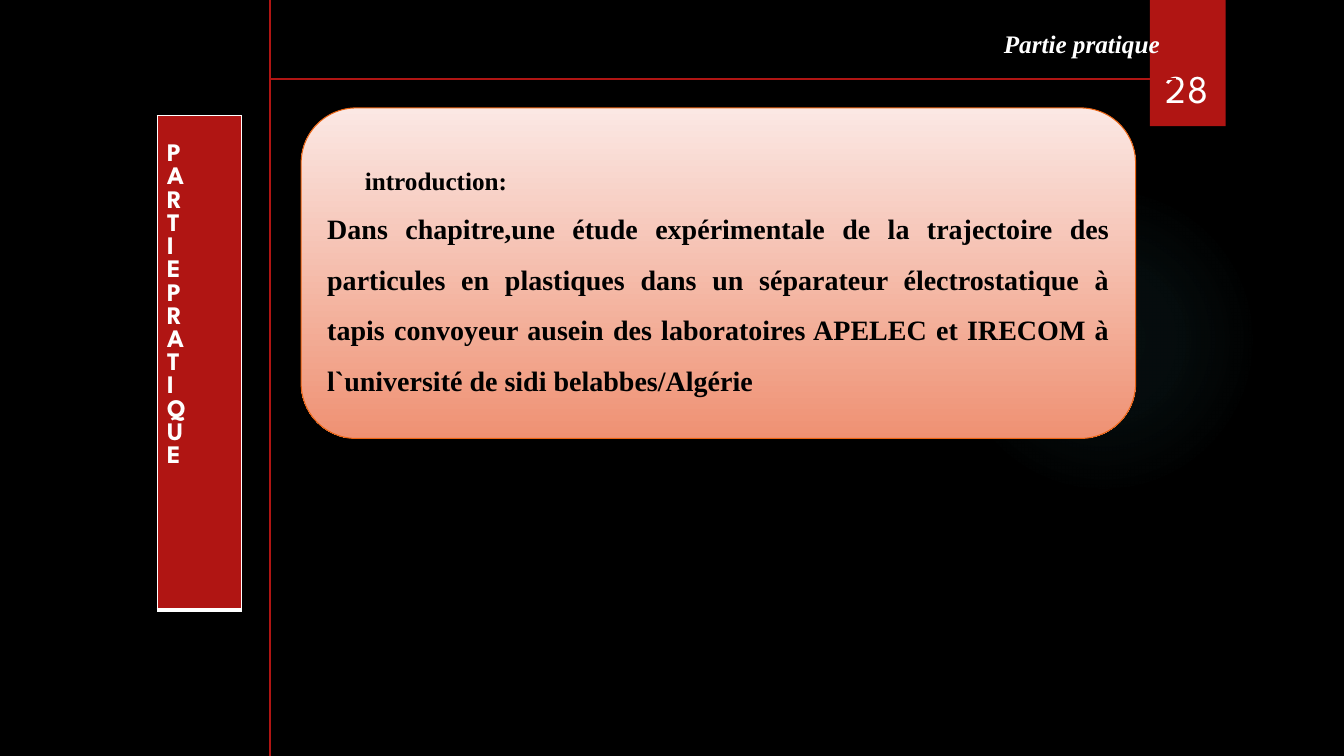
from pptx import Presentation
from pptx.dml.color import RGBColor
from pptx.enum.shapes import MSO_CONNECTOR, MSO_SHAPE
from pptx.enum.text import MSO_ANCHOR, PP_ALIGN
from pptx.oxml import parse_xml
from pptx.oxml.ns import nsdecls
from pptx.util import Cm, Pt

BLACK = RGBColor(0x00, 0x00, 0x00)
WHITE = RGBColor(0xFF, 0xFF, 0xFF)
RED = RGBColor(0xB0, 0x15, 0x13)
ORANGE = RGBColor(0xEA, 0x63, 0x12)
CARD_TOP = RGBColor(0xFB, 0xE8, 0xE4)
CARD_BOTTOM = RGBColor(0xEF, 0x91, 0x73)
TEAL = RGBColor(0x50, 0xB9, 0xC1)
SERIF = "Times New Roman"
SANS = "League Spartan"


class SlideBuilder:
    def __init__(self, deck):
        self.page = deck.slides.add_slide(deck.slide_layouts[6])
        background = self.page.background.fill
        background.solid()
        background.fore_color.rgb = BLACK

    def style(self, para, font, size, color, bold=False, italic=False, align=PP_ALIGN.LEFT):
        para.alignment = align
        for span in para.runs:
            span.font.name = font
            span.font.size = Pt(size)
            span.font.color.rgb = color
            span.font.bold = bold
            span.font.italic = italic

    def shape(self, kind, left, top, width, height):
        shape = self.page.shapes.add_shape(kind, Cm(left), Cm(top), Cm(width), Cm(height))
        shape.shadow.inherit = False
        shape.line.fill.background()
        return shape

    def block(self, left, top, width, height, color):
        block = self.shape(MSO_SHAPE.RECTANGLE, left, top, width, height)
        block.fill.solid()
        block.fill.fore_color.rgb = color

    def glow(self, left, top, size, color, stops):
        glow = self.shape(MSO_SHAPE.OVAL, left, top, size, size)
        glow.fill.background()
        stop_xml = "".join(
            f'<a:gs pos="{position * 1000}"><a:srgbClr val="{color}">'
            f'<a:alpha val="{alpha * 1000}"/></a:srgbClr></a:gs>'
            for position, alpha in stops)
        properties = glow.fill._xPr
        properties.replace(properties.find("{*}noFill"), parse_xml(
            f'<a:gradFill {nsdecls("a")}><a:gsLst>{stop_xml}</a:gsLst><a:path path="circle">'
            '<a:fillToRect l="50000" t="50000" r="50000" b="50000"/></a:path></a:gradFill>'))

    def text(self, left, top, width, height, words, anchor=MSO_ANCHOR.TOP, right_inset=0.25, **style):
        box = self.page.shapes.add_textbox(Cm(left), Cm(top), Cm(width), Cm(height))
        frame = box.text_frame
        frame.word_wrap = True
        frame.vertical_anchor = anchor
        frame.margin_right = Cm(right_inset)
        frame.text = words
        self.style(frame.paragraphs[0], **style)

    def line(self, x1, y1, x2, y2):
        line = self.page.shapes.add_connector(MSO_CONNECTOR.STRAIGHT, Cm(x1), Cm(y1), Cm(x2), Cm(y2))
        line.line.color.rgb = RED
        line.line.width = Pt(1.5)
        line._element.spPr.append(parse_xml(f'<a:effectLst {nsdecls("a")}/>'))

    def card(self, left, top, width, height, title, body):
        card = self.shape(MSO_SHAPE.ROUNDED_RECTANGLE, left, top, width, height)
        card.fill.gradient()
        card.fill.gradient_angle = 270
        for stop, color in zip(card.fill.gradient_stops, (CARD_TOP, CARD_BOTTOM)):
            stop.color.rgb = color
        card.line.color.rgb = ORANGE
        card.line.width = Pt(0.75)
        frame = card.text_frame
        frame.word_wrap = True
        frame.vertical_anchor = MSO_ANCHOR.MIDDLE
        frame.text = f"{title}\n{body}"
        for para, size in zip(frame.paragraphs, (18, 20)):
            para.line_spacing = 1.5
            self.style(para, SERIF, size, BLACK, bold=True, align=PP_ALIGN.JUSTIFY)
        frame.paragraphs[0]._p.get_or_add_pPr().set("marL", str(Cm(0.95)))

    def letter_column(self, left, top, width, height, letters):
        frame = self.page.shapes.add_table(1, 1, Cm(left), Cm(top), Cm(width), Cm(height))
        cell = frame.table.cell(0, 0)
        cell.fill.solid()
        cell.fill.fore_color.rgb = RED
        cell.margin_top = Cm(0.71)
        cell.text_frame.text = "\n".join(letters)
        for para in cell.text_frame.paragraphs:
            self.style(para, SANS, 18, WHITE, bold=True)
        borders = {"lnL": 1, "lnR": 1, "lnT": 1, "lnB": 3}
        for index, (side, width_pt) in enumerate(borders.items()):
            cell._tc.get_or_add_tcPr().insert(index, parse_xml(
                f'<a:{side} {nsdecls("a")} w="{Pt(width_pt)}"><a:solidFill>'
                f'<a:srgbClr val="{WHITE}"/></a:solidFill></a:{side}>'))


def main():
    deck = Presentation()
    deck.slide_width = Cm(33.87)
    deck.slide_height = Cm(19.05)
    slide = SlideBuilder(deck)

    # Backdrop and page number
    slide.glow(23.9, 4.65, 7.82, TEAL, [(0, 7), (36, 6), (69, 0)])
    slide.block(28.98, 0, 1.91, 3.18, RED)
    slide.text(28.75, 0.81, 2.34, 2.13, "28", anchor=MSO_ANCHOR.BOTTOM,
               font=SANS, size=28, color=WHITE, align=PP_ALIGN.CENTER)

    # Header and rules
    slide.text(21.18, 0.58, 8.46, 1.02, "Partie pratique", right_inset=0.41,
               font=SERIF, size=18, color=WHITE, bold=True, italic=True, align=PP_ALIGN.RIGHT)
    slide.line(6.81, 1.98, 29.64, 1.98)
    slide.line(6.81, 0, 6.81, 19.05)

    # Introduction card
    slide.card(7.59, 2.72, 21.03, 8.33, "introduction:",
               "Dans chapitre,une étude expérimentale de la trajectoire des particules "
               "en plastiques dans un séparateur électrostatique à tapis convoyeur ausein "
               "des laboratoires APELEC et IRECOM à l`université de sidi belabbes/Algérie")

    # Vertical section title
    slide.letter_column(3.96, 2.92, 2.13, 12.45, "PARTIEPRATIQUE")

    deck.save("out.pptx")


if __name__ == "__main__":
    main()
